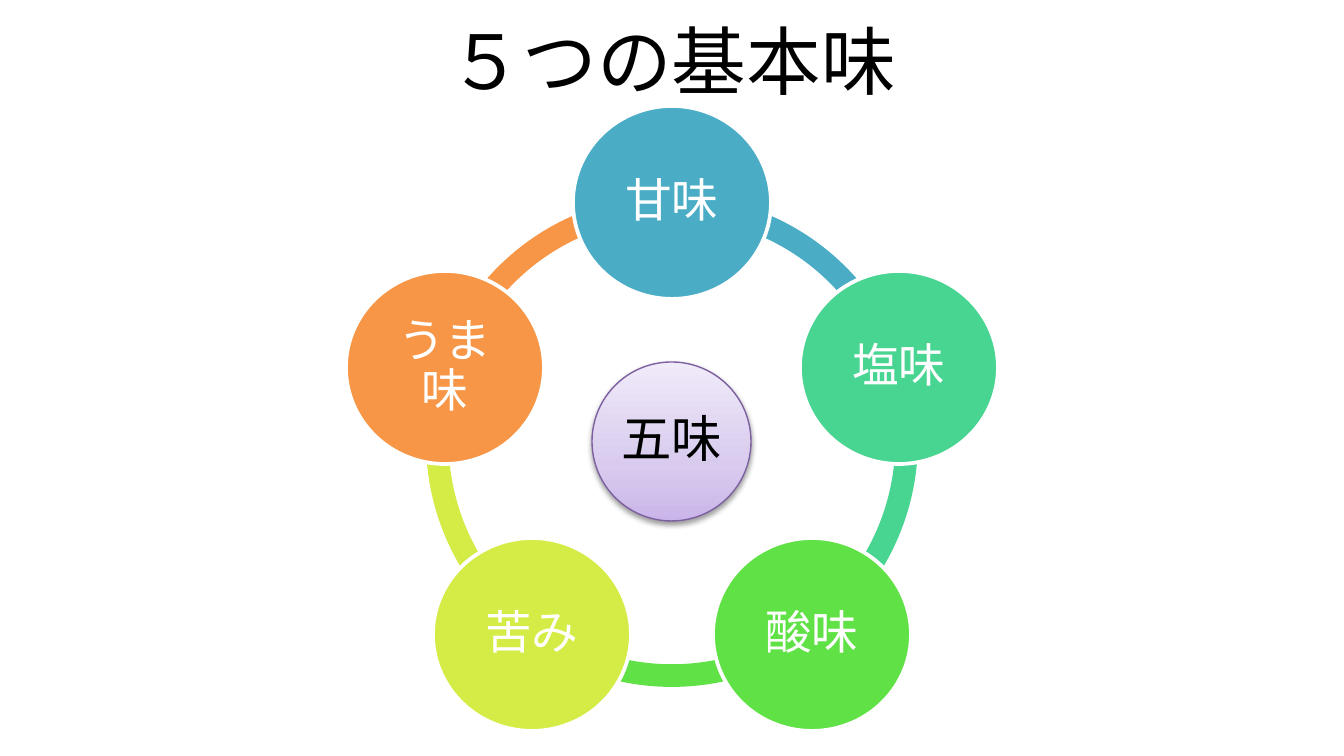
"""Build a slide showing the five basic tastes as a ring around a hub."""
from dataclasses import dataclass
from math import cos, radians, sin

from lxml.etree import SubElement
from pptx import Presentation
from pptx.dml.color import RGBColor
from pptx.enum.shapes import MSO_SHAPE as Preset
from pptx.enum.text import MSO_ANCHOR as Anchor, PP_ALIGN as Align
from pptx.oxml.ns import qn
from pptx.shapes.autoshape import Shape
from pptx.slide import Slide
from pptx.text.text import TextFrame
from pptx.util import Emu, Pt


@dataclass(frozen=True)
class Theme:
    font: str = "Calibri"
    title_size: int = 40
    hub_size: int = 27
    taste_size: int = 25
    dark: str = "000000"
    light: str = "FFFFFF"
    hub_line: str = "7D60A0"
    hub_stops: tuple = ((0, "C9B5E8"), (35, "D8CBEE"), (100, "F0EAF9"))


@dataclass(frozen=True)
class Taste:
    name: str
    color: str


@dataclass(frozen=True)
class Box:
    left: int
    top: int
    width: int
    height: int


THEME = Theme()
PX_PER_INCH = 134.4
CENTER_X, CENTER_Y = 672, 441
ORBIT = 239
RING_SIZE = 492
RING_THICKNESS = 0.046
HUB_SIZE = 159
TASTE_WIDTH, TASTE_HEIGHT = 198, 193
TASTES = (
    Taste("甘味", "4BACC6"),
    Taste("塩味", "48D491"),
    Taste("酸味", "60E146"),
    Taste("苦み", "D5EC46"),
    Taste("うま味", "F79646"),
)
STEP = 360 / len(TASTES)


def px(length: float) -> Emu:
    """Convert slide pixels to EMU."""
    return Emu(round(length * 914400 / PX_PER_INCH))


def centered(x: float, y: float, width: int, height: int) -> Box:
    """Return the box of a given size around a point."""
    return Box(round(x - width / 2), round(y - height / 2), width, height)


def add_preset(page: Slide, preset: Preset, box: Box) -> Shape:
    """Add a preset shape without a shadow."""
    shape = page.shapes.add_shape(
        preset, px(box.left), px(box.top), px(box.width), px(box.height))
    shape.shadow.inherit = False
    return shape


def paint(shape: Shape, color: str) -> None:
    """Fill a shape with one colour."""
    shape.fill.solid()
    shape.fill.fore_color.rgb = RGBColor.from_string(color)


def outline(shape: Shape, color: str, width: float) -> None:
    """Give a shape a solid outline."""
    shape.line.color.rgb = RGBColor.from_string(color)
    shape.line.width = Pt(width)


def write(frame: TextFrame, text: str, size: int, color: str) -> None:
    """Write one centred paragraph in the theme font."""
    frame.text = text
    frame.word_wrap = True
    frame.vertical_anchor = Anchor.MIDDLE
    para = frame.paragraphs[0]
    para.alignment = Align.CENTER
    para.font.name = THEME.font
    para.font.size = Pt(size)
    para.font.color.rgb = RGBColor.from_string(color)


def label(shape: Shape, text: str, size: int, color: str, inset: int) -> None:
    """Write a tightly spaced label inside a circle."""
    frame = shape.text_frame
    write(frame, text, size, color)
    frame.paragraphs[0].line_spacing = 0.9
    frame.margin_left = frame.margin_right = px(inset)
    frame.margin_top = frame.margin_bottom = px(inset)


def add_title(page: Slide, text: str) -> None:
    """Place and format the title placeholder."""
    title = page.shapes.title
    title.left, title.top, title.width, title.height = map(px, (67, -3, 1210, 126))
    write(title.text_frame, text, THEME.title_size, THEME.dark)


def add_arc(page: Slide, index: int, taste: Taste) -> None:
    """Draw the ring segment that leaves a taste clockwise."""
    arc = add_preset(page, Preset.BLOCK_ARC,
                     centered(CENTER_X, CENTER_Y, RING_SIZE, RING_SIZE))
    start = 270 + index * STEP
    arc.adjustments[0] = start % 360 * 0.6
    arc.adjustments[1] = (start + STEP) % 360 * 0.6
    arc.adjustments[2] = RING_THICKNESS
    paint(arc, taste.color)
    arc.line.fill.background()


def add_hub(page: Slide, text: str) -> None:
    """Draw the shaded circle in the middle of the ring."""
    hub = add_preset(page, Preset.OVAL,
                     centered(CENTER_X, CENTER_Y, HUB_SIZE, HUB_SIZE))
    hub.fill.gradient()
    hub.fill.gradient_angle = 90
    outline(hub, THEME.hub_line, 0.75)
    properties = hub.element.spPr
    stops = properties.find(qn("a:gradFill")).find(qn("a:gsLst"))
    for stop in list(stops):
        stops.remove(stop)
    for position, color in THEME.hub_stops:
        stop = SubElement(stops, qn("a:gs"), pos=str(position * 1000))
        SubElement(stop, qn("a:srgbClr"), val=color)
    shadow = SubElement(properties.find(qn("a:effectLst")), qn("a:outerShdw"),
                        blurRad=str(Pt(3.1)), dist=str(Pt(1.6)),
                        dir="5400000", rotWithShape="0")
    tint = SubElement(shadow, qn("a:srgbClr"), val=THEME.dark)
    SubElement(tint, qn("a:alpha"), val="38000")
    label(hub, text, THEME.hub_size, THEME.dark, 5)


def add_taste(page: Slide, index: int, taste: Taste) -> None:
    """Draw a taste circle at its place on the orbit."""
    angle = radians(270 + index * STEP)
    x, y = CENTER_X + ORBIT * cos(angle), CENTER_Y + ORBIT * sin(angle)
    circle = add_preset(page, Preset.OVAL,
                        centered(x, y, TASTE_WIDTH, TASTE_HEIGHT))
    paint(circle, taste.color)
    outline(circle, THEME.light, 2)
    label(circle, taste.name, THEME.taste_size, THEME.light, 4)


def main() -> None:
    """Build and save the deck."""
    deck = Presentation()
    deck.slide_width, deck.slide_height = px(1344), px(756)
    page = deck.slides.add_slide(deck.slide_layouts[5])
    add_title(page, "５つの基本味")
    for index, taste in reversed(list(enumerate(TASTES))):
        add_arc(page, index, taste)
    add_hub(page, "五味")
    for index, taste in enumerate(TASTES):
        add_taste(page, index, taste)
    deck.save("out.pptx")


if __name__ == "__main__":
    main()
